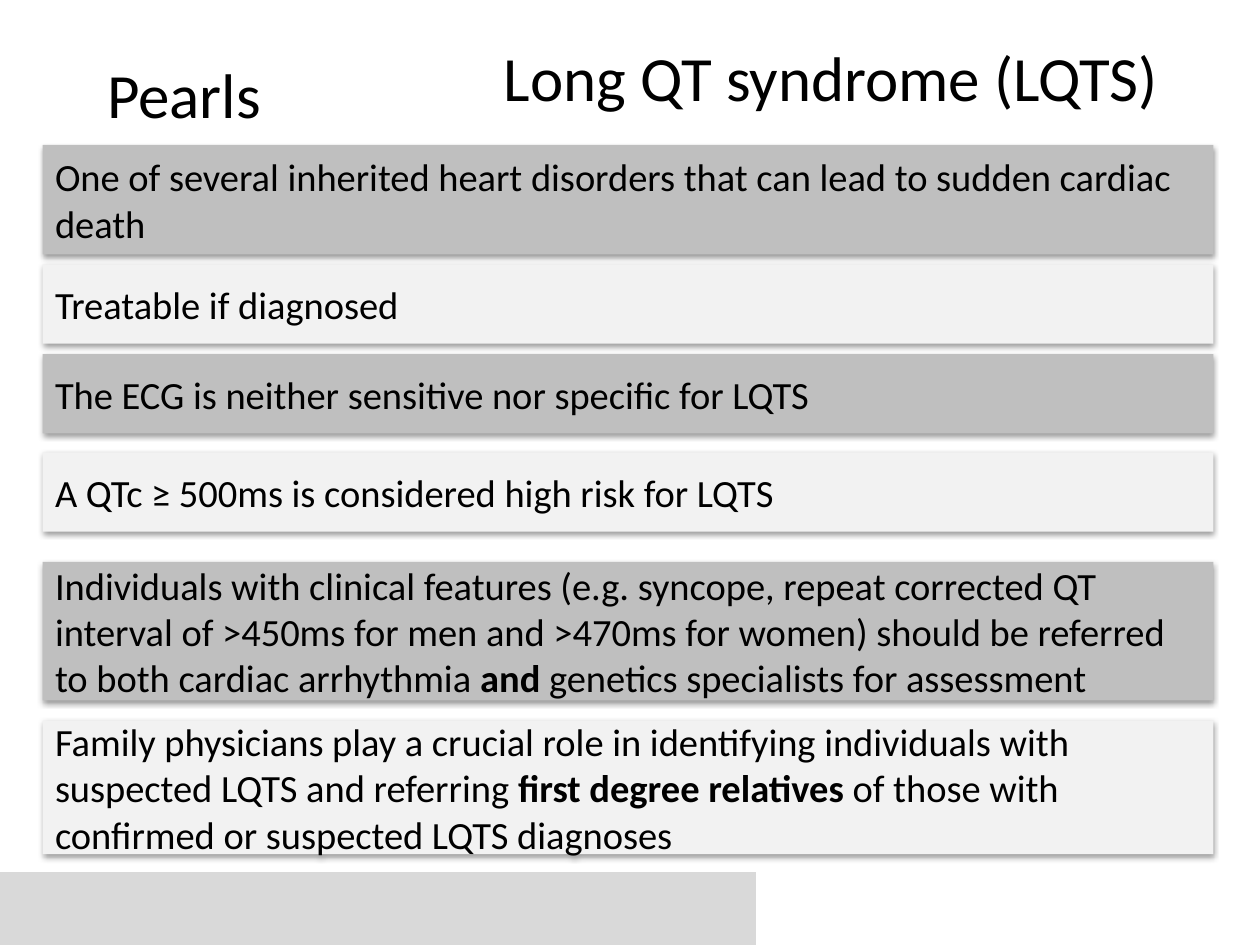
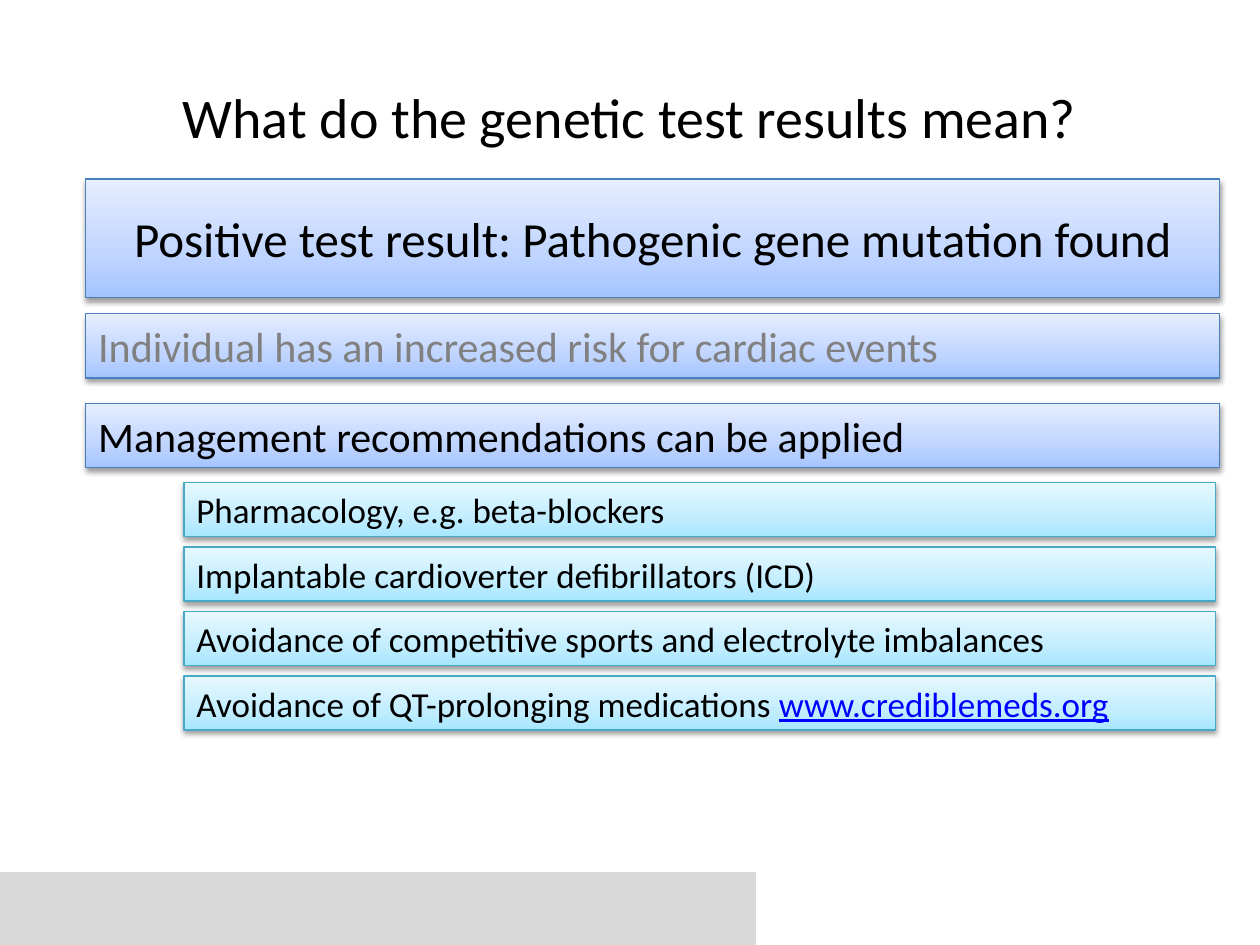
from copy import deepcopy
from lxml.etree import SubElement
from pptx import Presentation
from pptx.dml.color import RGBColor
from pptx.enum.shapes import MSO_SHAPE
from pptx.enum.text import MSO_ANCHOR, PP_ALIGN
from pptx.oxml.ns import qn
from pptx.util import Cm, Pt

FONT = "Calibri"
BLACK, GREY, LINK = "000000", "808080", "0000FF"
DARK, LIGHT, BAND = "BFBFBF", "F2F2F2", "D9D9D9"
BLUE = ("A4C4FF", "BFD4FF", "E6EEFF")
AQUA = ("A7E6FF", "C1EDFF", "E7F8FF")


def hue(code):
    return RGBColor.from_string(code)


def write(slide, text, box, size=22, color=BLACK, fill=None, line=None,
          shade=True, align=PP_ALIGN.LEFT, anchor=MSO_ANCHOR.MIDDLE, wrap=True):
    place = [Cm(n) for n in box]
    if fill is None:
        shape = slide.shapes.add_textbox(*place)
    else:
        shape = slide.shapes.add_shape(MSO_SHAPE.RECTANGLE, *place)
        if isinstance(fill, str):
            shape.fill.solid()
            shape.fill.fore_color.rgb = hue(fill)
        else:
            shape.fill.gradient()
            shape.fill.gradient_angle = 90
            stops = shape._element.spPr.find(".//" + qn("a:gsLst"))
            stops.insert(1, deepcopy(stops[0]))
            for stop, code, spot in zip(shape.fill.gradient_stops, fill, (0, 0.35, 1)):
                stop.color.rgb = hue(code)
                stop.position = spot
        if line:
            shape.line.color.rgb = hue(line)
            shape.line.width = Pt(0.75)
        else:
            shape.line.fill.background()
        shape.shadow.inherit = False
        if shade:
            glow = SubElement(shape._element.spPr.find(qn("a:effectLst")), qn("a:outerShdw"),
                              blurRad="40000", dist="20000", dir="5400000", rotWithShape="0")
            tint = SubElement(glow, qn("a:srgbClr"), val=BLACK)
            SubElement(tint, qn("a:alpha"), val="38000")
    frame = shape.text_frame
    frame.word_wrap = wrap
    frame.vertical_anchor = anchor
    para = frame.paragraphs[0]
    para.alignment = align
    for part in [text] if isinstance(text, str) else text:
        words, style = (part, {}) if isinstance(part, str) else part
        run = para.add_run()
        run.text = words
        run.font.name = FONT
        run.font.size = Pt(size)
        run.font.bold = style.get("bold")
        run.font.underline = style.get("under")
        run.font.color.rgb = hue(style.get("color", color))
    return shape


deck = Presentation()
deck.slide_width, deck.slide_height = Cm(25.4), Cm(19.05)
pearls, results = [deck.slides.add_slide(deck.slide_layouts[6]) for _ in range(2)]
for slide in (pearls, results):
    write(slide, [], (0, 17.58, 15.24, 1.47), fill=BAND, shade=False)

write(pearls, "Pearls", (1.91, 0.99, 3.99, 1.8), size=36, anchor=MSO_ANCHOR.TOP)
write(pearls, "Long QT syndrome (LQTS)", (9.91, 0.66, 13.82, 1.8), size=36,
      anchor=MSO_ANCHOR.TOP, wrap=False)

facts = [
    (2.92, 2.21, "One of several inherited heart disorders that can lead to sudden cardiac death"),
    (5.33, 1.6, "Treatable if diagnosed"),
    (7.14, 1.6, "The ECG is neither sensitive nor specific for LQTS"),
    (9.12, 1.6, "A QTc ≥ 500ms is considered high risk for LQTS"),
    (11.33, 2.79, [
        "Individuals with clinical features (e.g. syncope, repeat corrected QT interval of "
        ">450ms for men and >470ms for women) should be referred to both cardiac arrhythmia ",
        ("and", {"bold": True}),
        " genetics specialists for assessment"]),
    (14.53, 2.69, [
        "Family physicians play a crucial role in identifying individuals with suspected "
        "LQTS and referring ",
        ("first degree relatives ", {"bold": True}),
        "of those with confirmed or suspected LQTS diagnoses"]),
]
shades = [DARK, LIGHT, DARK, LIGHT, DARK, LIGHT]
for (top, height, text), shade in zip(facts, shades):
    write(pearls, text, (0.86, top, 23.6, height), fill=shade)

write(results, "What do the genetic test results mean?", (1.27, 0.76, 22.86, 3.18),
      size=32, align=PP_ALIGN.CENTER)

points = [
    (3.61, 2.39, 28, BLACK, PP_ALIGN.CENTER, "Positive test result: Pathogenic gene mutation found"),
    (6.32, 1.3, 24, GREY, PP_ALIGN.LEFT, "Individual has an increased risk for cardiac events"),
    (8.13, 1.3, 24, BLACK, PP_ALIGN.LEFT, "Management recommendations can be applied"),
]
for top, height, size, color, align, text in points:
    write(results, text, (1.73, top, 22.86, height), size=size, color=color,
          fill=BLUE, line="4B7EBC", align=align)

steps = [
    "Pharmacology, e.g. beta-blockers",
    "Implantable cardioverter defibrillators (ICD)",
    "Avoidance of competitive sports and electrolyte imbalances",
    ["Avoidance of QT-prolonging medications ",
     ("www.crediblemeds.org", {"color": LINK, "under": True})],
]
for row, text in enumerate(steps):
    write(results, text, (3.71, 9.73 + 1.3 * row, 20.8, 1.09), size=20,
          fill=AQUA, line="46AAC5")

deck.save("out.pptx")
